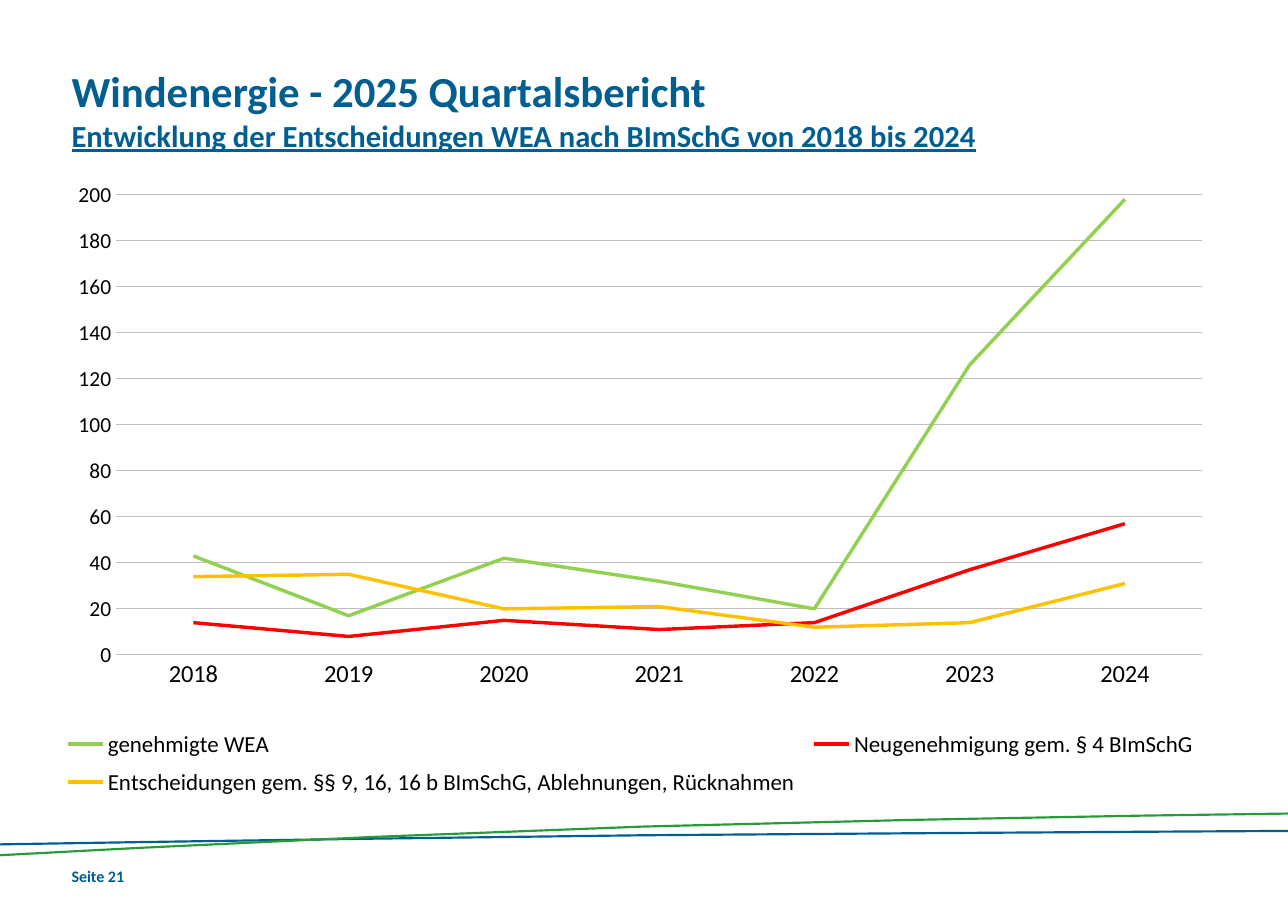
from lxml.etree import SubElement
from pptx import Presentation
from pptx.chart.data import CategoryChartData
from pptx.dml.color import RGBColor
from pptx.enum.chart import XL_CHART_TYPE, XL_LEGEND_POSITION, XL_TICK_MARK
from pptx.enum.text import MSO_ANCHOR, PP_ALIGN
from pptx.oxml.ns import qn
from pptx.util import Cm, Pt

BLUE, GREEN, GRAY, BLACK = "005E90", "289B38", "BFBFBF", "000000"
YEARS = ["2018", "2019", "2020", "2021", "2022", "2023", "2024"]
DECISIONS = [
    ("genehmigte WEA", "92D050", (43, 17, 42, 32, 20, 126, 198)),
    ("Neugenehmigung gem. § 4 BImSchG", "FF0000", (14, 8, 15, 11, 14, 37, 57)),
    ("Entscheidungen gem. §§ 9, 16, 16 b BImSchG, Ablehnungen, Rücknahmen",
     "FFC000", (34, 35, 20, 21, 12, 14, 31)),
]
WAVE_X = (0, 1.78, 8.66, 14.83, 20.96, 27.91, 29.7)
WAVES = [
    (BLUE, (0.71, 0.68, 0.57, 0.5, 0.45, 0.41, 0.4)),
    (GREEN, (0.96, 0.86, 0.5, 0.3, 0.12, 0.02, 0)),
]
WAVE_THICKNESS = 0.05


def color(value):
    """Turn a hex string into a colour."""
    return RGBColor.from_string(value)


def set_font(font, size, value, bold=False):
    """Apply the slide's typeface with a size and colour."""
    font.name, font.size, font.bold = "Calibri", Pt(size), bold
    font.color.rgb = color(value)


def clear_frame(frame):
    """Remove the margins and anchor the text at the top."""
    frame.margin_left = frame.margin_right = frame.margin_top = frame.margin_bottom = 0
    frame.vertical_anchor = MSO_ANCHOR.TOP


def place_title(page, left, top, width, height):
    """Fill the title placeholder with heading and underlined subheading."""
    title = page.shapes.title
    title.left, title.top, title.width, title.height = map(Cm, (left, top, width, height))
    frame = title.text_frame
    clear_frame(frame)
    frame.word_wrap = True
    para = frame.paragraphs[0]
    para.alignment = PP_ALIGN.LEFT
    set_font(para.font, 28, BLUE, True)
    heading = para.add_run()
    heading.text = "Windenergie - 2025 Quartalsbericht"
    set_font(heading.font, 28, BLUE, True)
    para.add_line_break()
    subheading = para.add_run()
    subheading.text = "Entwicklung der Entscheidungen WEA nach BImSchG von 2018 bis 2024"
    set_font(subheading.font, 20, BLUE, True)
    subheading.font.underline = True


def curve_points(controls, steps=3):
    """Sample a chain of cubic curves that share their end points."""
    points = [controls[0]]
    for first in range(0, len(controls) - 1, 3):
        start, pull, push, end = controls[first:first + 4]
        for step in range(1, steps + 1):
            t = step / steps
            weights = ((1 - t) ** 3, 3 * t * (1 - t) ** 2, 3 * t * t * (1 - t), t ** 3)
            points.append(tuple(
                sum(weight * value for weight, value in zip(weights, values))
                for values in zip(start, pull, push, end)))
    return points


def place_waves(page, left, top):
    """Draw the two crossing bands above the footer."""
    for fill, heights in WAVES:
        upper = [(left + x, top + y) for x, y in curve_points(list(zip(WAVE_X, heights)))]
        lower = [(x, y + WAVE_THICKNESS) for x, y in reversed(upper)]
        outline = [(Cm(x), Cm(y)) for x, y in upper + lower]
        builder = page.shapes.build_freeform(*outline[0])
        builder.add_line_segments(outline[1:])
        wave = builder.convert_to_shape()
        wave.shadow.inherit = False
        wave.fill.solid()
        wave.fill.fore_color.rgb = color(fill)
        wave.line.fill.background()


def place_page_number(page, left, top, width, height):
    """Write the page number in the footer."""
    box = page.shapes.add_textbox(Cm(left), Cm(top), Cm(width), Cm(height))
    clear_frame(box.text_frame)
    para = box.text_frame.paragraphs[0]
    para.text = "Seite 21"
    set_font(para.font, 10.5, BLUE, True)


def fix_layout(part, position, fractions, target=None):
    """Place a chart part by fractions of the chart's size."""
    for old in part.findall(qn("c:layout")):
        part.remove(old)
    layout = SubElement(part, qn("c:layout"))
    part.insert(position, layout)
    manual = SubElement(layout, qn("c:manualLayout"))
    settings = {"layoutTarget": target} if target else {}
    settings.update(xMode="edge", yMode="edge", **dict(zip("xywh", fractions)))
    for name, value in settings.items():
        SubElement(manual, qn(f"c:{name}")).set("val", str(value))


def style_axes(chart):
    """Format both axes and the grid."""
    years, counts = chart.category_axis, chart.value_axis
    for axis, size in ((years, 16), (counts, 14)):
        axis.major_tick_mark = axis.minor_tick_mark = XL_TICK_MARK.NONE
        set_font(axis.tick_labels.font, size, BLACK)
    counts.minimum_scale, counts.maximum_scale, counts.major_unit = 0, 200, 20
    counts.format.line.fill.background()
    for line in (years.format.line, counts.major_gridlines.format.line):
        line.color.rgb = color(GRAY)
        line.width = Pt(0.75)


def place_chart(page, left, top, width, height):
    """Plot the decisions per year as lines."""
    data = CategoryChartData()
    data.categories = YEARS
    for name, _, values in DECISIONS:
        data.add_series(name, values)
    chart = page.shapes.add_chart(
        XL_CHART_TYPE.LINE, Cm(left), Cm(top), Cm(width), Cm(height), data).chart
    set_font(chart.font, 10, BLUE)
    chart.has_title = False
    chart.has_legend = True
    chart.legend.position = XL_LEGEND_POSITION.BOTTOM
    chart.legend.include_in_layout = False
    set_font(chart.legend.font, 15, BLACK)
    chart.plots[0].vary_by_categories = False
    for series, (_, stroke, _) in zip(chart.plots[0].series, DECISIONS):
        series.smooth = False
        series.format.line.color.rgb = color(stroke)
        series.format.line.width = Pt(2.25)
    style_axes(chart)
    plot_area = chart.plots[0]._element.getparent()
    plot_box = (1.37 / width, 0.99 / height, 25.06 / width, 10.61 / height)
    fix_layout(plot_area, 0, plot_box, "inner")
    fix_layout(chart.legend._element, 1, (0, 0.85, 0.99, 0.13))


def main():
    """Build the slide and save it."""
    deck = Presentation()
    deck.slide_width, deck.slide_height = Cm(29.7), Cm(21)
    page = deck.slides.add_slide(deck.slide_layouts[5])
    place_page_number(page, 1.65, 19.98, 1.8, 0.64)
    place_waves(page, 0, 18.73)
    place_title(page, 1.65, 1.5, 26.4, 2.7)
    place_chart(page, 1.3, 3.5, 26.75, 15.4)
    deck.save("out.pptx")


if __name__ == "__main__":
    main()
